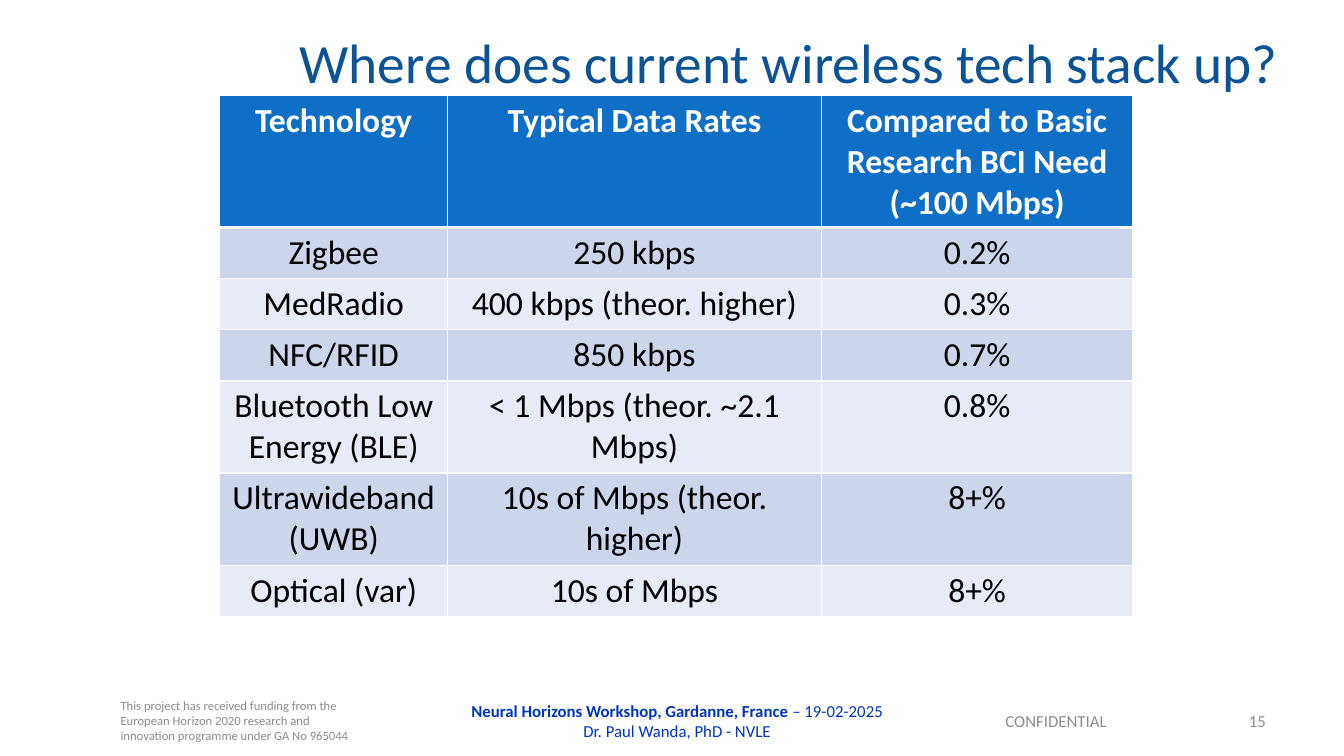
from lxml.etree import SubElement
from pptx import Presentation
from pptx.dml.color import RGBColor
from pptx.enum.text import MSO_ANCHOR as Anchor, PP_ALIGN as Align
from pptx.oxml.ns import qn
from pptx.util import Cm, Pt

FONT = "Calibri"
WHITE, BLACK, GREY = "FFFFFF", "000000", "8C8C8C"
TITLE_BLUE, EVENT_BLUE, HEADER_BLUE = "0B5394", "0035BA", "0F6FC6"
BANDS = ["CCD5EA", "E7EBF5"]

COLUMN_WIDTHS = [5.74, 9.42, 7.85]
HEADER_HEIGHT, LINE_HEIGHT, DOUBLE_HEIGHT = 3.32, 1.29, 2.32
ROWS = [
    (HEADER_HEIGHT, "Technology", "Typical Data Rates",
     "Compared to Basic Research BCI Need (~100 Mbps)"),
    (LINE_HEIGHT, "Zigbee", "250 kbps", "0.2%"),
    (LINE_HEIGHT, "MedRadio", "400 kbps (theor. higher)", "0.3%"),
    (LINE_HEIGHT, "NFC/RFID", "850 kbps", "0.7%"),
    (DOUBLE_HEIGHT, "Bluetooth Low Energy (BLE)", "< 1 Mbps (theor. ~2.1 Mbps)", "0.8%"),
    (DOUBLE_HEIGHT, "Ultrawideband (UWB)", "10s of Mbps (theor. higher)", "8+%"),
    (LINE_HEIGHT, "Optical (var)", "10s of Mbps", "8+%"),
]


def color(hex_string):
    return RGBColor.from_string(hex_string)


def add_run(paragraph, text, size, hex_string, bold=False):
    run = paragraph.add_run()
    run.text = text
    run.font.name = FONT
    run.font.size = Pt(size)
    run.font.bold = bold
    run.font.color.rgb = color(hex_string)


def add_text(slide, box, lines, size, hex_string, align):
    """Each line is a list of (text, bold) runs."""
    frame = slide.shapes.add_textbox(*map(Cm, box)).text_frame
    frame.word_wrap = True
    frame.vertical_anchor = Anchor.MIDDLE
    for index, line in enumerate(lines):
        paragraph = frame.add_paragraph() if index else frame.paragraphs[0]
        paragraph.alignment = align
        for text, bold in line:
            add_run(paragraph, text, size, hex_string, bold)


def set_borders(cell, bottom_width):
    properties = cell._tc.get_or_add_tcPr()
    for side, width in [("L", 1), ("R", 1), ("T", 1), ("B", bottom_width)]:
        line = SubElement(properties, qn(f"a:ln{side}"), w=str(Pt(width)))
        fill = SubElement(line, qn("a:solidFill"))
        SubElement(fill, qn("a:srgbClr"), val=WHITE)


def add_title(slide, box):
    add_text(slide, box, [[("Where does current wireless tech stack up?", False)]],
             39.6, TITLE_BLUE, Align.CENTER)


def add_rate_table(slide, left, top):
    height = sum(row[0] for row in ROWS)
    box = (left, top, sum(COLUMN_WIDTHS), height)
    table = slide.shapes.add_table(len(ROWS), len(COLUMN_WIDTHS), *map(Cm, box)).table
    for column, width in zip(table.columns, COLUMN_WIDTHS):
        column.width = Cm(width)
    for row_index, (row_height, *texts) in enumerate(ROWS):
        table.rows[row_index].height = Cm(row_height)
        header = row_index == 0
        for column_index, text in enumerate(texts):
            cell = table.cell(row_index, column_index)
            set_borders(cell, 3 if header else 1)
            cell.fill.solid()
            cell.fill.fore_color.rgb = color(
                HEADER_BLUE if header else BANDS[(row_index - 1) % 2])
            paragraph = cell.text_frame.paragraphs[0]
            paragraph.alignment = Align.CENTER
            add_run(paragraph, text, 24, WHITE if header else BLACK, header)


def add_footer(slide, top, height):
    funding = ("This project has received funding from the European Horizon 2020 "
               "research and innovation programme under GA No 965044")
    event = [[("Neural Horizons Workshop, Gardanne, France ", True), ("– 19-02-2025", False)],
             [("Dr. Paul Wanda, PhD - NVLE", False)]]
    parts = [
        (2.79, 6.53, [[(funding, False)]], 9, GREY, Align.LEFT),
        (11.58, 10.97, event, 12, EVENT_BLUE, Align.CENTER),
        (22.63, 5.51, [[("CONFIDENTIAL", False)]], 12, GREY, Align.RIGHT),
        (28.52, 3.63, [[("15", False)]], 12, GREY, Align.RIGHT),
    ]
    for left, width, *content in parts:
        add_text(slide, (left, top, width, height), *content)


def main():
    presentation = Presentation()
    presentation.slide_width, presentation.slide_height = Cm(33.87), Cm(19.05)
    slide = presentation.slides.add_slide(presentation.slide_layouts[6])
    # Heading
    add_title(slide, (6.81, 0.46, 26.14, 2.16))
    # Technology comparison
    add_rate_table(slide, 5.54, 2.41)
    # Footer line
    add_footer(slide, 17.65, 1.02)
    presentation.save("out.pptx")


if __name__ == "__main__":
    main()
